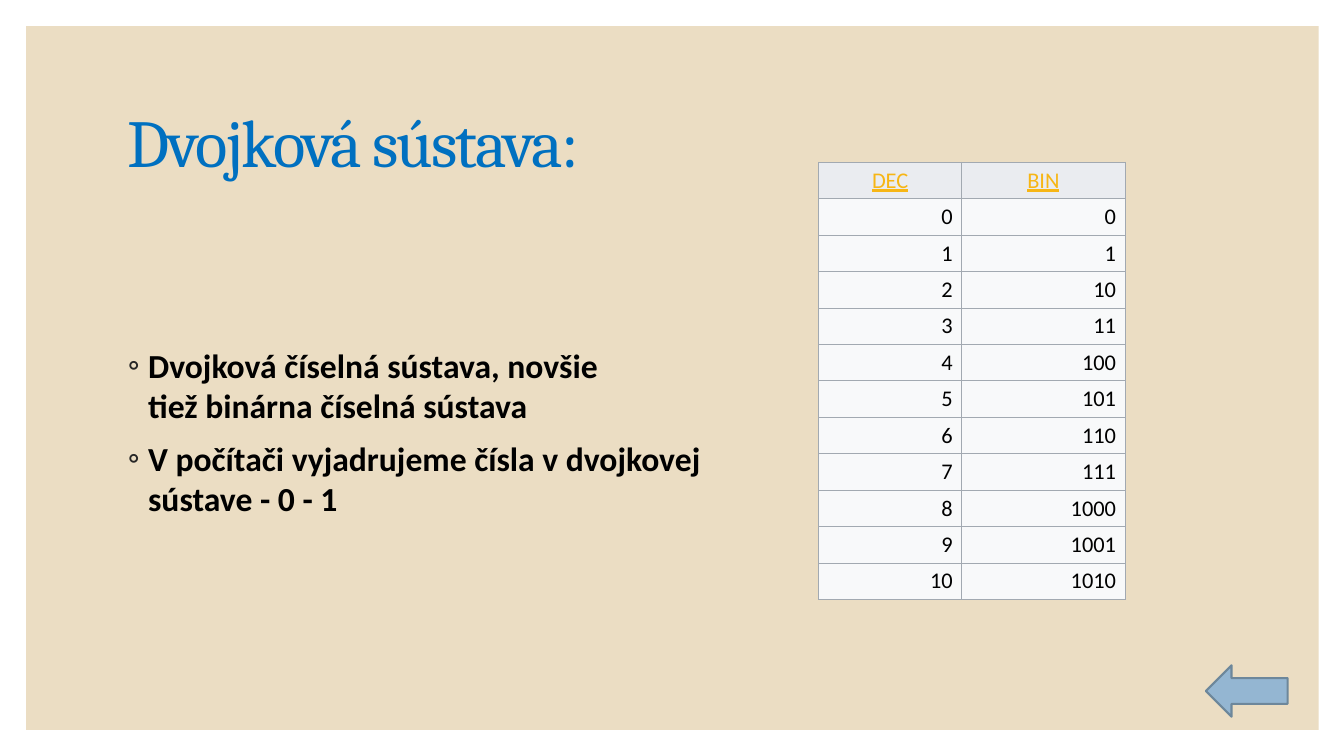
from dataclasses import dataclass

from lxml.etree import SubElement
from pptx import Presentation
from pptx.dml.color import RGBColor
from pptx.enum.shapes import MSO_SHAPE as Shape
from pptx.enum.text import MSO_ANCHOR as Anchor, PP_ALIGN as Align
from pptx.oxml.ns import qn
from pptx.util import Inches, Pt


@dataclass(frozen=True)
class Theme:
    sand: str = "EBDDC3"
    title: str = "0070C0"
    ink: str = "000000"
    bullet: str = "262626"
    heading: str = "F7B615"
    heading_fill: str = "EAECF0"
    cell_fill: str = "F8F9FA"
    border: str = "A2A9B1"
    arrow: str = "94B6D2"
    arrow_line: str = "6D879B"
    title_font: str = "Cambria"
    body_font: str = "Calibri"
    title_size: int = 48
    body_size: int = 24
    table_size: int = 16


class SlideBuilder:
    """Draw styled elements on one slide, with lengths in percent of its size."""

    def __init__(self, presentation, theme):
        self.theme = theme
        self.width = presentation.slide_width
        self.height = presentation.slide_height
        self.slide = presentation.slides.add_slide(presentation.slide_layouts[6])

    def across(self, share):
        return round(self.width * share / 100)

    def down(self, share):
        return round(self.height * share / 100)

    def box(self, left, top, width, height):
        return self.across(left), self.down(top), self.across(width), self.down(height)

    def style(self, paragraph, font_name, size, color, bold=False, underline=False):
        font = paragraph.font
        font.name, font.size = font_name, Pt(size)
        font.bold, font.underline = bold, underline
        font.color.rgb = RGBColor.from_string(color)

    def shape(self, kind, place, fill, line=None):
        shape = self.slide.shapes.add_shape(kind, *self.box(*place))
        shape.shadow.inherit = False
        shape.fill.solid()
        shape.fill.fore_color.rgb = RGBColor.from_string(fill)
        if line:
            shape.line.color.rgb = RGBColor.from_string(line)
            shape.line.width = Pt(1.5)
        else:
            shape.line.fill.background()

    def text_frame(self, place):
        frame = self.slide.shapes.add_textbox(*self.box(*place)).text_frame
        frame.word_wrap = True
        return frame

    def title(self, place, text):
        frame = self.text_frame(place)
        frame.vertical_anchor = Anchor.MIDDLE
        paragraph = frame.paragraphs[0]
        paragraph.text = text
        paragraph.line_spacing = 0.9
        self.style(paragraph, self.theme.title_font, self.theme.title_size, self.theme.title)
        paragraph.runs[0].font._element.set("spc", "-150")

    def bullets(self, place, top_inset, items):
        frame = self.text_frame(place)
        frame.margin_top = self.down(top_inset)
        for index, item in enumerate(items):
            paragraph = frame.paragraphs[0] if index == 0 else frame.add_paragraph()
            paragraph.text = item
            paragraph.space_after = Pt(9)
            properties = paragraph._p.get_or_add_pPr()
            properties.set("marL", str(Inches(0.2)))
            properties.set("indent", str(-Inches(0.2)))
            color = SubElement(properties, qn("a:buClr"))
            SubElement(color, qn("a:srgbClr"), val=self.theme.bullet)
            SubElement(properties, qn("a:buFont"), typeface=self.theme.body_font)
            SubElement(properties, qn("a:buChar"), char="◦")
            self.style(paragraph, self.theme.body_font, self.theme.body_size,
                       self.theme.ink, bold=True)

    def cell(self, cell, text, heading):
        theme = self.theme
        cell.text = text
        cell.vertical_anchor = Anchor.MIDDLE
        cell.margin_left = cell.margin_right = Inches(0.09)
        cell.margin_top = cell.margin_bottom = Inches(0.04)
        paragraph = cell.text_frame.paragraphs[0]
        paragraph.alignment = Align.CENTER if heading else Align.RIGHT
        self.style(paragraph, theme.body_font, theme.table_size,
                   theme.heading if heading else theme.ink, underline=heading)
        properties = cell._tc.get_or_add_tcPr()
        for side in ("lnL", "lnR", "lnT", "lnB"):
            line = SubElement(properties, qn(f"a:{side}"), w=str(Pt(0.75)))
            fill = SubElement(line, qn("a:solidFill"))
            SubElement(fill, qn("a:srgbClr"), val=theme.border)
        cell.fill.solid()
        cell.fill.fore_color.rgb = RGBColor.from_string(
            theme.heading_fill if heading else theme.cell_fill)

    def table(self, left, top, column_widths, row_height, rows):
        place = self.box(left, top, sum(column_widths), row_height * len(rows))
        table = self.slide.shapes.add_table(len(rows), len(column_widths), *place).table
        for column, width in zip(table.columns, column_widths):
            column.width = self.across(width)
        for row_index, values in enumerate(rows):
            table.rows[row_index].height = self.down(row_height)
            for column_index, value in enumerate(values):
                self.cell(table.cell(row_index, column_index), value, row_index == 0)


def main():
    presentation = Presentation()
    presentation.slide_width, presentation.slide_height = Inches(13.33), Inches(7.5)
    theme = Theme()
    builder = SlideBuilder(presentation, theme)
    builder.shape(Shape.RECTANGLE, (1.95, 3.47, 96.17, 93.07), theme.sand)
    builder.title((8.78, 9.33, 82.52, 20), "Dvojková sústava:")
    builder.bullets((8.78, 30.67, 45.09, 57.33), 14.9, [
        "Dvojková číselná sústava, novšie\ntiež binárna číselná sústava",
        "V počítači vyjadrujeme čísla v dvojkovej sústave - 0 - 1",
    ])
    numbers = [(str(number), f"{number:b}") for number in range(11)]
    builder.table(60.91, 21.47, (10.65, 12.15), 4.82, [("DEC", "BIN"), *numbers])
    builder.shape(Shape.LEFT_ARROW, (89.72, 88, 6.08, 6.8), theme.arrow, theme.arrow_line)
    presentation.save("out.pptx")


if __name__ == "__main__":
    main()
